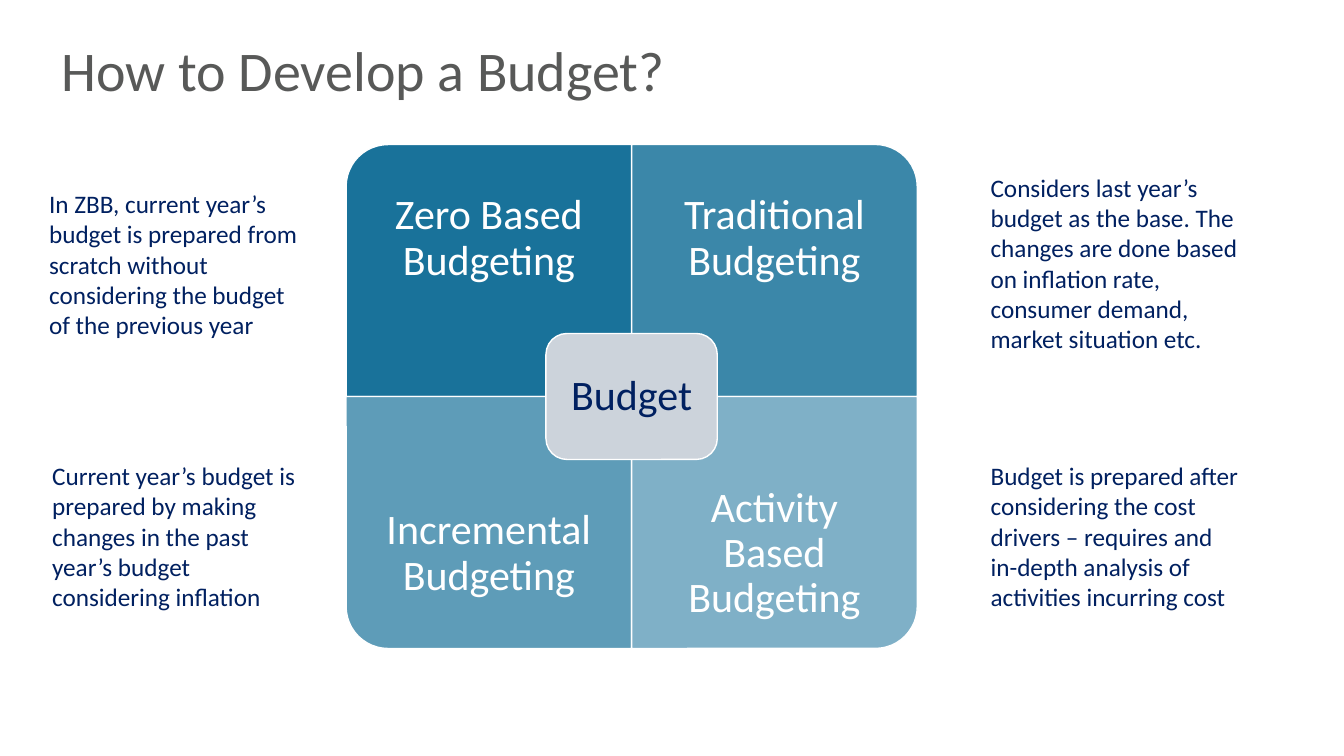
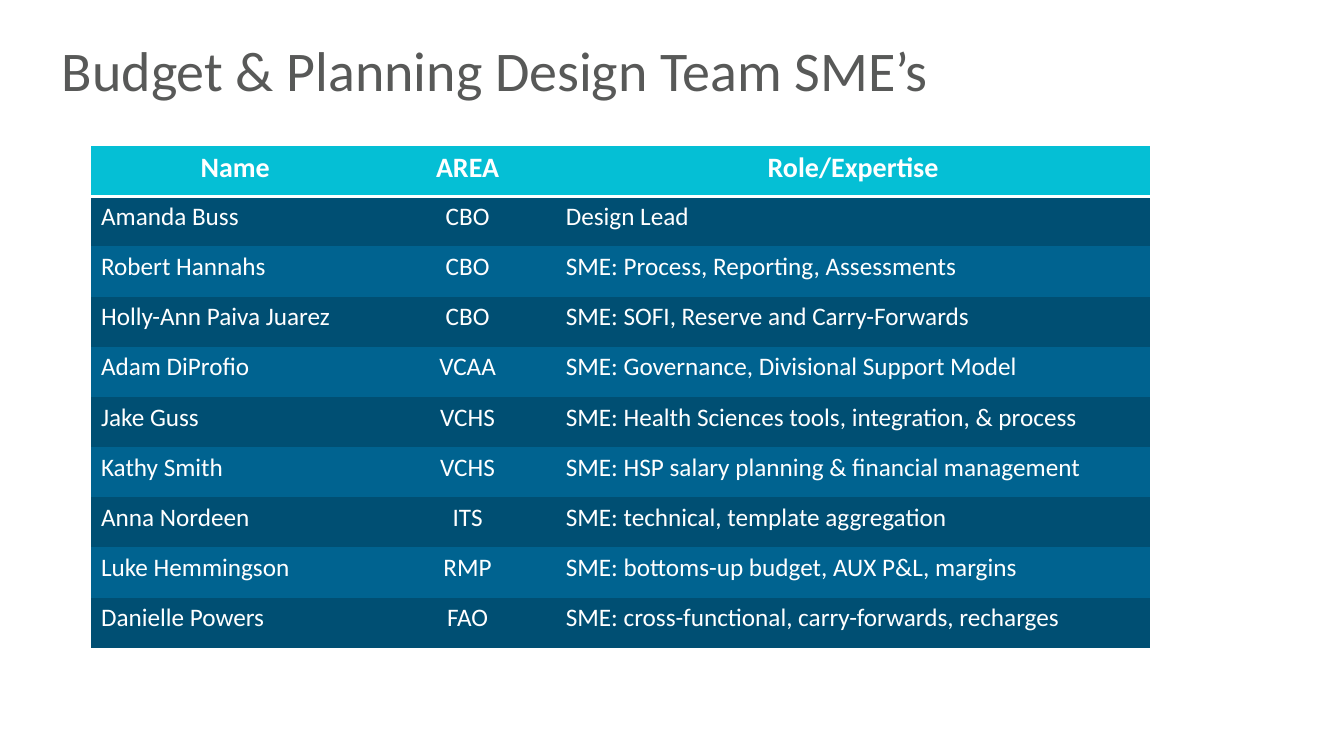
from lxml import etree
from pptx import Presentation
from pptx.dml.color import RGBColor
from pptx.enum.shapes import MSO_SHAPE
from pptx.enum.text import MSO_ANCHOR, MSO_AUTO_SIZE, PP_ALIGN
from pptx.oxml.ns import qn
from pptx.util import Pt

LEFT, CENTER = PP_ALIGN.LEFT, PP_ALIGN.CENTER
TOP, MIDDLE = MSO_ANCHOR.TOP, MSO_ANCHOR.MIDDLE
CORNER_RECT = MSO_SHAPE.ROUND_1_RECTANGLE
ROUND_RECT = MSO_SHAPE.ROUNDED_RECTANGLE
FONT = "Calibri"
WHITE, GRAY, NAVY = "FFFFFF", "585958", "002060"
BLUE, DEEP_BLUE, CYAN, SILVER = "006390", "004F73", "05BFD5", "CCD3DB"
NO_STYLE = "{2D5ABB26-0587-4C30-8999-92F81FD0307C}"
TITLES = ["How to Develop a Budget?", "Budget & Planning Design Team SME’s"]


def color(value):
    return RGBColor.from_string(value)


def write(frame, text, size=18, ink=NAVY, align=LEFT, anchor=TOP,
          bold=False, spacing=1.0, inset=None):
    frame.word_wrap = True
    frame.vertical_anchor = anchor
    if inset is not None:
        frame.margin_left = frame.margin_right = Pt(inset)
        frame.margin_top = frame.margin_bottom = Pt(inset)
    para = frame.paragraphs[0]
    para.alignment = align
    para.line_spacing = spacing
    span = para.add_run()
    span.text = text
    span.font.name = FONT
    span.font.size = Pt(size)
    span.font.bold = bold
    span.font.color.rgb = color(ink)


deck = Presentation()
deck.slide_width, deck.slide_height = Pt(960), Pt(540)

pages = []
for heading in TITLES:
    page = deck.slides.add_slide(deck.slide_layouts[5])
    title = page.shapes.title
    title.left, title.top, title.width, title.height = Pt(37), Pt(0), Pt(890), Pt(104.4)
    title.text_frame.auto_size = MSO_AUTO_SIZE.NONE
    write(title.text_frame, heading, size=40, ink=GRAY, anchor=MIDDLE, spacing=0.9)
    pages.append(page)
methods_page, team_page = pages

center_x, center_y = 451.2, 283.2
quad_width, quad_height, label_height = 204, 180, 135
quadrants = [
    ("Zero Based Budgeting", 0, 0, 270, 90),
    ("Traditional Budgeting", 1, 0, 0, 77),
    ("Incremental Budgeting", 0, 1, 180, 63),
    ("Activity Based Budgeting", 1, 1, 90, 50),
]
for name, column, row, angle, opacity in quadrants:
    left = center_x + (column - 1) * quad_width
    top = center_y + (row - 1) * quad_height
    width, height = quad_width, quad_height
    if angle in (90, 270):
        width, height = height, width
    quadrant = methods_page.shapes.add_shape(
        CORNER_RECT, Pt(left + (quad_width - width) / 2),
        Pt(top + (quad_height - height) / 2), Pt(width), Pt(height))
    quadrant.rotation = angle
    quadrant.shadow.inherit = False
    quadrant.fill.solid()
    quadrant.fill.fore_color.rgb = color(BLUE)
    fill_color = quadrant.element.spPr.find(qn("a:solidFill"))[0]
    etree.SubElement(fill_color, qn("a:alpha"), val=str(opacity * 1000))
    quadrant.line.color.rgb = color(WHITE)
    quadrant.line.width = Pt(1)
    label_top = top + row * (quad_height - label_height)
    label = methods_page.shapes.add_textbox(
        Pt(left), Pt(label_top), Pt(quad_width), Pt(label_height))
    write(label.text_frame, name, size=30, ink=WHITE, align=CENTER,
          anchor=MIDDLE, spacing=0.9, inset=17)

hub_width, hub_height = 122.4, 90
hub = methods_page.shapes.add_shape(
    ROUND_RECT, Pt(center_x - hub_width / 2), Pt(center_y - hub_height / 2),
    Pt(hub_width), Pt(hub_height))
hub.shadow.inherit = False
hub.fill.solid()
hub.fill.fore_color.rgb = color(SILVER)
hub.line.color.rgb = color(WHITE)
hub.line.width = Pt(1)
write(hub.text_frame, "Budget", size=30, align=CENTER, anchor=MIDDLE,
      spacing=0.9, inset=8)

descriptions = [
    (28, 131, 116.6, "In ZBB, current year’s budget is prepared from scratch "
     "without considering the budget of the previous year"),
    (30.2, 325.4, 116.6, "Current year’s budget is prepared by making changes "
     "in the past year’s budget considering inflation"),
    (700.5, 119.5, 138.2, "Considers last year’s budget as the base. The changes are "
     "done based on inflation rate, consumer demand, market situation etc."),
    (700.5, 325.4, 116.6, "Budget is prepared after considering the cost drivers – "
     "requires and in-depth analysis of activities incurring cost"),
]
for left, top, height, text in descriptions:
    box = methods_page.shapes.add_textbox(Pt(left), Pt(top), Pt(194.4), Pt(height))
    write(box.text_frame, text)

members = [
    ("Name", "AREA", "Role/Expertise"),
    ("Amanda Buss", "CBO", "Design Lead"),
    ("Robert Hannahs", "CBO", "SME: Process, Reporting, Assessments"),
    ("Holly-Ann Paiva Juarez", "CBO", "SME: SOFI, Reserve and Carry-Forwards"),
    ("Adam DiProfio", "VCAA", "SME: Governance, Divisional Support Model"),
    ("Jake Guss", "VCHS", "SME: Health Sciences tools, integration, & process"),
    ("Kathy Smith", "VCHS", "SME: HSP salary planning & financial management"),
    ("Anna Nordeen", "ITS", "SME: technical, template aggregation"),
    ("Luke Hemmingson", "RMP", "SME: bottoms-up budget, AUX P&L, margins"),
    ("Danielle Powers", "FAO", "SME: cross-functional, carry-forwards, recharges"),
]
column_widths = [206, 126, 424.8]
row_height = 35.85
frame = team_page.shapes.add_table(
    len(members), len(column_widths), Pt(65), Pt(104.4),
    Pt(sum(column_widths)), Pt(row_height * len(members)))
table = frame.table
table._tbl.tblPr.find(qn("a:tableStyleId")).text = NO_STYLE
for column, width in zip(table.columns, column_widths):
    column.width = Pt(width)
for row_index, member in enumerate(members):
    table.rows[row_index].height = Pt(row_height)
    header = row_index == 0
    shade = CYAN if header else (BLUE, DEEP_BLUE)[row_index % 2]
    for column_index, text in enumerate(member):
        cell = table.cell(row_index, column_index)
        cell.fill.solid()
        cell.fill.fore_color.rgb = color(shade)
        centered = header or column_index == 1
        write(cell.text_frame, text, size=20 if header else 18, ink=WHITE,
              align=CENTER if centered else LEFT, bold=header)
        if header:
            border = etree.Element(qn("a:lnB"), w=str(Pt(2)))
            border_fill = etree.SubElement(border, qn("a:solidFill"))
            etree.SubElement(border_fill, qn("a:srgbClr"), val=WHITE)
            cell._tc.get_or_add_tcPr().insert(0, border)

deck.save("out.pptx")
